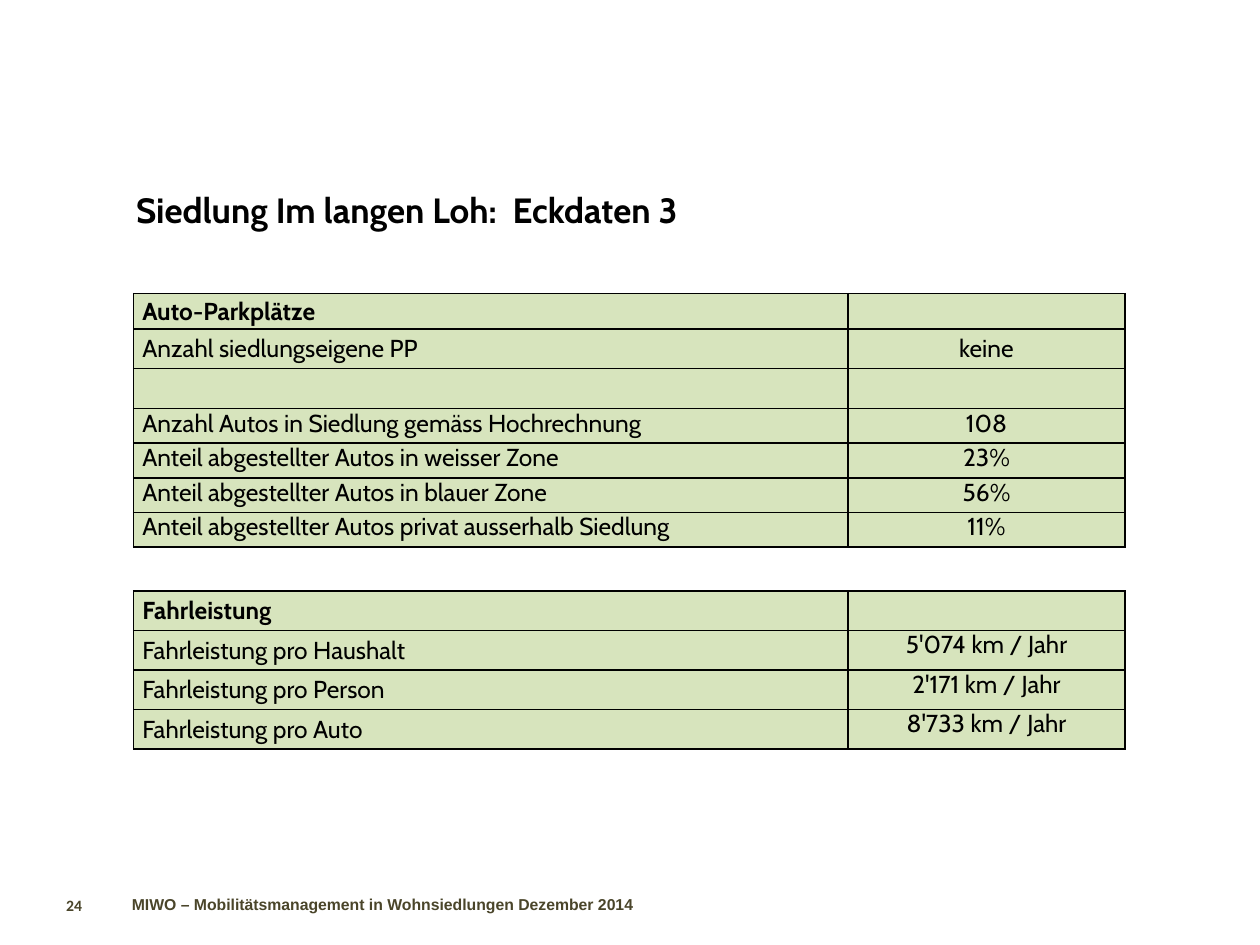
from lxml.etree import SubElement
from pptx import Presentation
from pptx.dml.color import RGBColor
from pptx.enum.text import MSO_ANCHOR, PP_ALIGN
from pptx.oxml.ns import qn
from pptx.util import Inches, Pt

COLORS = {"text": "000000", "cell": "D7E4BD", "border": "000000", "footer": "4A452A"}
COLUMN_WIDTHS = (5.67, 2.2)
HEADER_HEIGHT, ROW_HEIGHT, EMPTY_ROW_HEIGHT = 0.28, 0.26, 0.32

PARKING = [
    ("Auto-Parkplätze", ""),
    ("Anzahl siedlungseigene PP", "keine"),
    ("", ""),
    ("Anzahl Autos in Siedlung gemäss Hochrechnung", "108"),
    ("Anteil abgestellter Autos in weisser Zone", "23%"),
    ("Anteil abgestellter Autos in blauer Zone", "56%"),
    ("Anteil abgestellter Autos privat ausserhalb Siedlung", "11%"),
]
MILEAGE = [
    ("Fahrleistung", ""),
    ("Fahrleistung pro Haushalt", "5'074 km / Jahr"),
    ("Fahrleistung pro Person", "2'171 km / Jahr"),
    ("Fahrleistung pro Auto", "8'733 km / Jahr"),
]


def style_paragraph(paragraph, font_name, size, color, bold, align):
    paragraph.alignment = align
    font = paragraph.font
    font.name, font.size, font.bold = font_name, Pt(size), bold
    font.color.rgb = RGBColor.from_string(COLORS[color])


def set_title(slide, text):
    title = slide.shapes.title
    title.left, title.top = Inches(0.98), Inches(1.39)
    title.width, title.height = Inches(7.89), Inches(0.55)
    title.text_frame.text = text
    title.text_frame.vertical_anchor = MSO_ANCHOR.MIDDLE
    style_paragraph(title.text_frame.paragraphs[0], "Cabin", 20, "text", True, PP_ALIGN.LEFT)


def add_footer_text(slide, text, width, height, font_name, align, anchor):
    box = slide.shapes.add_textbox(Inches(0.28), Inches(7.06), Inches(width), Inches(height))
    frame = box.text_frame
    frame.word_wrap = True
    frame.vertical_anchor = anchor
    frame.text = text
    style_paragraph(frame.paragraphs[0], font_name, 9, "footer", True, align)


def add_borders(cell):
    properties = cell._tc.get_or_add_tcPr()
    for side in ("lnL", "lnR", "lnT", "lnB"):
        line = SubElement(properties, qn(f"a:{side}"), w=str(Pt(1)))
        fill = SubElement(line, qn("a:solidFill"))
        SubElement(fill, qn("a:srgbClr"), val=COLORS["border"])


def fill_cell(cell, text, bold, align, anchor, tight, margin):
    add_borders(cell)
    cell.fill.solid()
    cell.fill.fore_color.rgb = RGBColor.from_string(COLORS["cell"])
    cell.margin_left = cell.margin_right = Inches(0.07)
    cell.margin_top = cell.margin_bottom = Inches(margin)
    cell.vertical_anchor = anchor
    cell.text = text
    paragraph = cell.text_frame.paragraphs[0]
    if tight:
        paragraph.line_spacing = Pt(14)
    style_paragraph(paragraph, "Cabin", 14, "text", bold, align)


def add_data_table(slide, rows, top, tight_labels, tight_values, value_anchor, header_margin):
    """Rows from index tight_labels / tight_values on have 14 pt line spacing."""
    heights = [HEADER_HEIGHT] + [ROW_HEIGHT if label else EMPTY_ROW_HEIGHT
                                 for label, _ in rows[1:]]
    table = slide.shapes.add_table(
        len(rows), len(COLUMN_WIDTHS), Inches(1.06), Inches(top),
        Inches(sum(COLUMN_WIDTHS)), Inches(sum(heights))).table
    table.first_row = table.horz_banding = False
    for column, width in zip(table.columns, COLUMN_WIDTHS):
        column.width = Inches(width)
    for index, (label, value) in enumerate(rows):
        table.rows[index].height = Inches(heights[index])
        is_header = index == 0
        margin = header_margin if is_header else 0.04
        fill_cell(table.cell(index, 0), label, is_header, PP_ALIGN.LEFT, MSO_ANCHOR.MIDDLE,
                  not label or index >= tight_labels, margin)
        fill_cell(table.cell(index, 1), value, False, PP_ALIGN.CENTER, value_anchor,
                  not value or index >= tight_values, margin)


def main():
    presentation = Presentation()
    presentation.slide_width, presentation.slide_height = Inches(10), Inches(7.5)
    slide = presentation.slides.add_slide(presentation.slide_layouts[5])

    # Footer line and page number
    add_footer_text(slide, "MIWO – Mobilitätsmanagement in Wohnsiedlungen Dezember 2014",
                    5.51, 0.23, "Arial", PP_ALIGN.CENTER, MSO_ANCHOR.MIDDLE)
    add_footer_text(slide, "24", 0.47, 0.24, "Calibri", PP_ALIGN.RIGHT, MSO_ANCHOR.TOP)

    set_title(slide, "Siedlung Im langen Loh:  Eckdaten 3")

    # Parking and mileage figures
    add_data_table(slide, PARKING, 2.33, tight_labels=3, tight_values=3,
                   value_anchor=MSO_ANCHOR.MIDDLE, header_margin=0)
    add_data_table(slide, MILEAGE, 4.69, tight_labels=len(MILEAGE), tight_values=1,
                   value_anchor=MSO_ANCHOR.TOP, header_margin=0.04)

    presentation.save("out.pptx")


if __name__ == "__main__":
    main()
